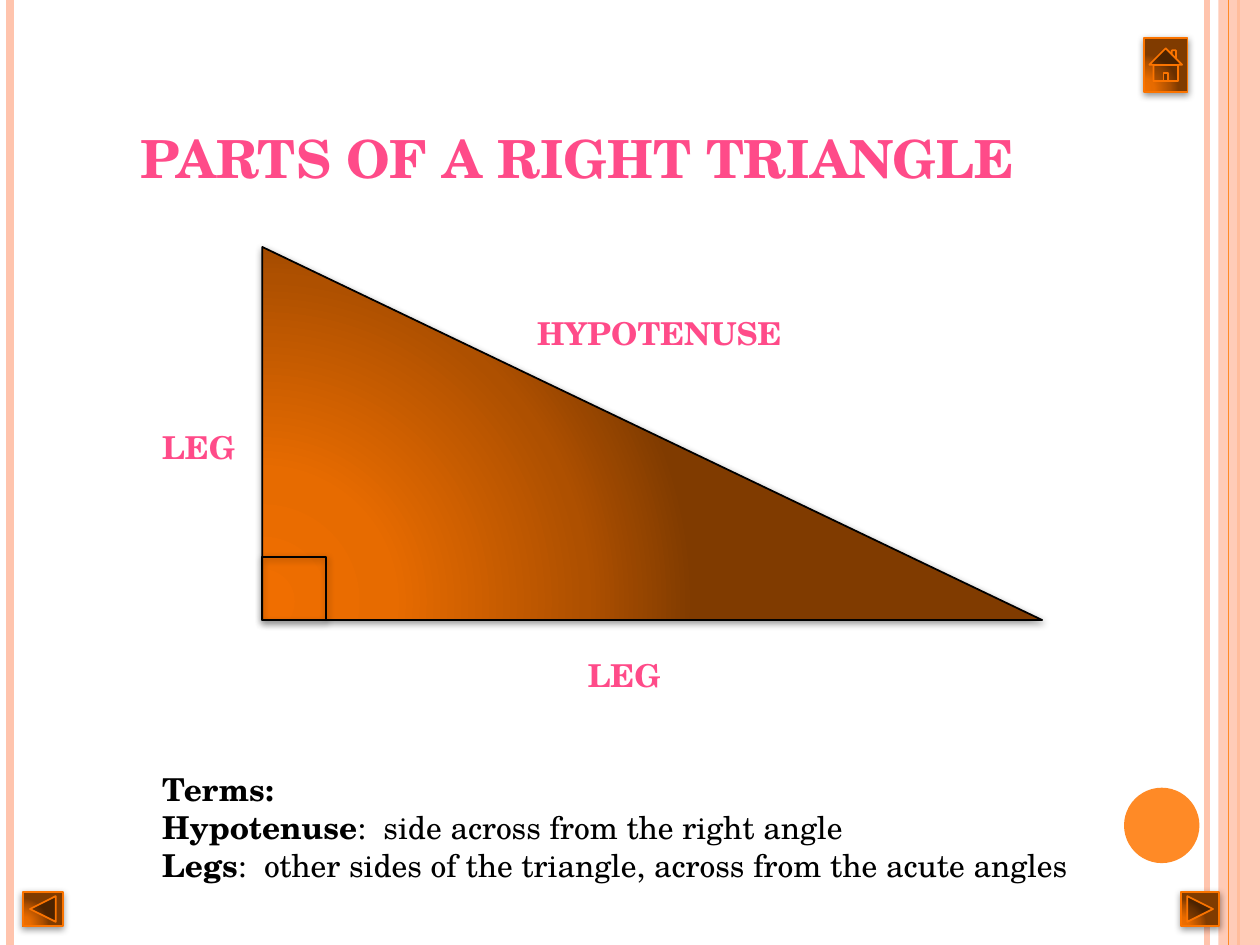
from lxml.etree import SubElement
from pptx import Presentation
from pptx.dml.color import RGBColor
from pptx.enum.shapes import MSO_CONNECTOR, MSO_SHAPE
from pptx.enum.text import MSO_ANCHOR, PP_ALIGN
from pptx.oxml import parse_xml
from pptx.oxml.ns import nsdecls, qn
from pptx.util import Cm, Pt

HUES = {"peach": "FFC4AD", "orange": "FF8A26", "edge": "FB7400",
        "pink": "FF4B89", "black": "000000"}
STOPS = {0: "F06E00", 30: "E76B00", 75: "AE5000", 100: "803B00"}
FONT = "TeX Gyre Schola"


def style(run, size, hue, bold=True):
    font = run.font
    font.name, font.size, font.bold = FONT, Pt(size), bold
    font.color.rgb = RGBColor.from_string(HUES[hue])


def raised(kind, box, hue, glow=True):
    """Add an outlined shape with a soft shadow and, if glow, a radial fill."""
    shape = slide.shapes.add_shape(kind, *map(Cm, box))
    shape.line.color.rgb = RGBColor.from_string(HUES[hue])
    shape.line.width = Pt(1)
    shape.shadow.inherit = False
    props = shape._element.spPr
    props.find(qn("a:effectLst")).append(parse_xml(
        f'<a:outerShdw {nsdecls("a")} blurRad="{Pt(4)}" dist="{Pt(1.6)}" '
        'dir="5400000" rotWithShape="0"><a:srgbClr val="000000">'
        '<a:alpha val="42000"/></a:srgbClr></a:outerShdw>'))
    if not glow:
        shape.fill.background()
        return
    stops = "".join(f'<a:gs pos="{pos * 1000}"><a:srgbClr val="{tint}"/></a:gs>'
                    for pos, tint in STOPS.items())
    props.find(qn("a:prstGeom")).addnext(parse_xml(
        f'<a:gradFill {nsdecls("a")} rotWithShape="1"><a:gsLst>{stops}</a:gsLst>'
        '<a:path path="circle"><a:fillToRect l="5000" t="100000" '
        'r="120000" b="10000"/></a:path></a:gradFill>'))


deck = Presentation()
deck.slide_width, deck.slide_height = Cm(25.4), Cm(19.05)
slide = deck.slides.add_slide(deck.slide_layouts[5])

# Side bands, back to front
shapes = slide.shapes
for left, hue, width in [(24.33, "peach", 3), (0.2, "peach", 4.5),
                         (24.97, "orange", 1.5), (24.77, "orange", 0.75)]:
    if left == 24.77:
        band = shapes.add_shape(MSO_SHAPE.RECTANGLE, Cm(24.56), 0, Cm(0.84), Cm(19.05))
        band.shadow.inherit = False
        band.line.fill.background()
        band.fill.solid()
        band.fill.fore_color.rgb = RGBColor.from_string(HUES["peach"])
        tint = next(band._element.spPr.iter(qn("a:srgbClr")))
        SubElement(tint, qn("a:alpha"), val="87000")
    rule = shapes.add_connector(MSO_CONNECTOR.STRAIGHT, Cm(left), 0, Cm(left), Cm(19.05))
    rule.line.color.rgb = RGBColor.from_string(HUES[hue])
    rule.line.width = Pt(width)
    SubElement(rule._element.spPr, qn("a:effectLst"))

disc = shapes.add_shape(MSO_SHAPE.OVAL, Cm(22.66), Cm(15.88), Cm(1.52), Cm(1.52))
disc.shadow.inherit = False
disc.line.fill.background()
disc.fill.solid()
disc.fill.fore_color.rgb = RGBColor.from_string(HUES["orange"])

# Title
title = shapes.title
title.left, title.top, title.width, title.height = map(Cm, (1.27, 0.76, 20.75, 3.18))
title.text_frame.text = "PARTS OF A RIGHT TRIANGLE"
title.text_frame.vertical_anchor = MSO_ANCHOR.BOTTOM
head = title.text_frame.paragraphs[0]
head.alignment = PP_ALIGN.CENTER
style(head.runs[0], 30, "pink")

# Triangle with its right-angle mark
raised(MSO_SHAPE.RIGHT_TRIANGLE, (5.29, 4.98, 15.72, 7.52), "black")
raised(MSO_SHAPE.RECTANGLE, (5.29, 11.23, 1.29, 1.27), "black", glow=False)

# Side names
for text, left, top, width in [("HYPOTENUSE", 10.58, 6.2, 7.52),
                               ("LEG", 3.02, 8.5, 3.12),
                               ("LEG", 11.6, 13.1, 7.52)]:
    label = shapes.add_textbox(Cm(left), Cm(top), Cm(width), Cm(1.02)).text_frame
    label.word_wrap = True
    label.text = text
    style(label.paragraphs[0].runs[0], 18, "pink")

# Terms
terms = shapes.add_textbox(Cm(3.02), Cm(15.4), Cm(19), Cm(2.56)).text_frame
terms.word_wrap = True
terms.text = "Terms:"
style(terms.paragraphs[0].runs[0], 18, "black")
for term, sense in [
        ("Hypotenuse", ":  side across from the right angle"),
        ("Legs", ":  other sides of the triangle, across from the acute angles")]:
    para = terms.add_paragraph()
    para.text = term
    para.add_run().text = sense
    for run, bold in zip(para.runs, (True, False)):
        style(run, 18, "black", bold)

# Page buttons
for kind, box in [
        (MSO_SHAPE.ACTION_BUTTON_HOME, (23.06, 0.76, 0.88, 1.09)),
        (MSO_SHAPE.ACTION_BUTTON_FORWARD_OR_NEXT, (23.81, 17.98, 0.77, 0.69)),
        (MSO_SHAPE.ACTION_BUTTON_BACK_OR_PREVIOUS, (0.46, 17.98, 0.81, 0.69))]:
    raised(kind, box, "edge")

deck.save("out.pptx")
